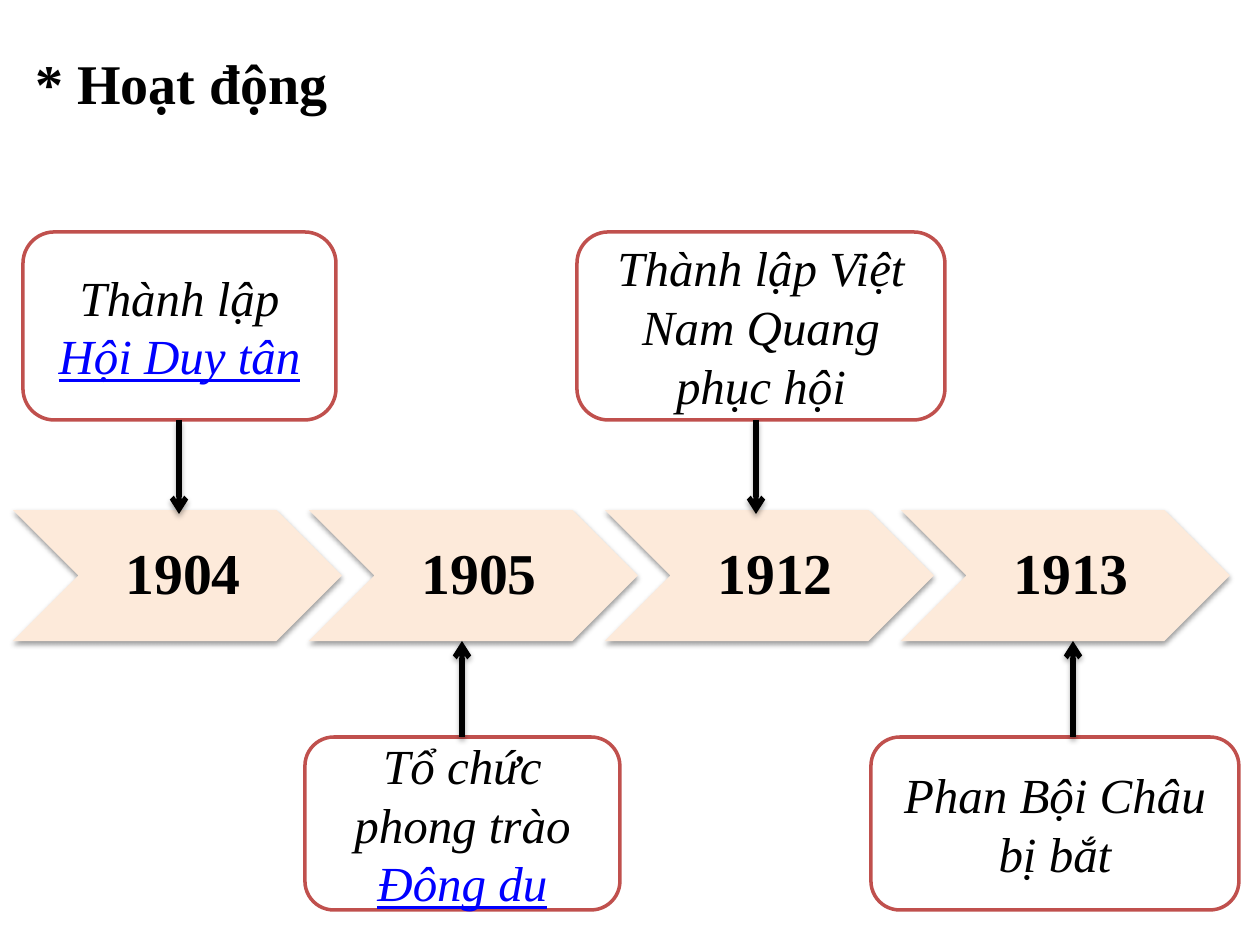
from dataclasses import dataclass

from lxml import etree
from pptx import Presentation
from pptx import util as u
from pptx.dml.color import RGBColor
from pptx.enum import shapes, text
from pptx.oxml import ns

PX = u.Inches(1) / 126  # one px in EMU


@dataclass(frozen=True)
class Theme:
    font: str = "Times New Roman"
    ink: str = "000000"
    link: str = "0000FF"
    paper: str = "FFFFFF"
    border: str = "C0504D"
    band: str = "FDEADA"
    title_size: int = 32
    year_size: int = 33
    event_size: int = 28


@dataclass(frozen=True)
class Event:
    year: str
    wording: str
    linked: str
    left: int
    width: int
    above: bool
    arrow_x: int


THEME = Theme()
EVENTS = (
    Event("1904", "Thành lập ", "Hội Duy tân", 23, 313, True, 179),
    Event("1905", "Tổ chức phong trào ", "Đông du", 305, 315, False, 462),
    Event("1912", "Thành lập Việt Nam Quang phục hội", "", 577, 368, True, 756),
    Event("1913", "Phan Bội Châu bị bắt", "", 871, 368, False, 1073),
)

# Timeline band and the two rows of event boxes
BAND_LEFT, BAND_TOP, BAND_HEIGHT = 13, 510, 131
CHEVRON_WIDTH, CHEVRON_STEP = 329, 296
UPPER_TOP, UPPER_HEIGHT = 232, 188
LOWER_TOP, LOWER_HEIGHT = 737, 173
ARROW_OVERLAP = 4


def px(*lengths: int) -> list[int]:
    return [round(length * PX) for length in lengths]


def color(value: str) -> RGBColor:
    return RGBColor.from_string(value)


def set_font(font, size: int, bold: bool = False, italic: bool = False) -> None:
    font.name = THEME.font
    font.size = u.Pt(size)
    font.bold = bold
    font.italic = italic
    font.color.rgb = color(THEME.ink)


def add_shadow(item, opacity: int, distance: float) -> None:
    properties = item._element.spPr
    for old in properties.findall(ns.qn("a:effectLst")):
        properties.remove(old)
    effects = etree.SubElement(properties, ns.qn("a:effectLst"))
    shadow = etree.SubElement(
        effects, ns.qn("a:outerShdw"), blurRad=str(u.Pt(3.1)),
        dist=str(u.Pt(distance)), dir="5400000", rotWithShape="0")
    tint = etree.SubElement(shadow, ns.qn("a:srgbClr"), val=THEME.ink)
    etree.SubElement(tint, ns.qn("a:alpha"), val=str(opacity * 1000))


def add_title(page, wording: str) -> None:
    box = page.shapes.add_textbox(*px(23, 42, 777, 81))
    box.text_frame.word_wrap = True
    para = box.text_frame.paragraphs[0]
    para.text = wording
    para.alignment = text.PP_ALIGN.JUSTIFY
    set_font(para.font, THEME.title_size, bold=True)


def add_year(page, index: int, year: str) -> None:
    chevron = page.shapes.add_shape(
        shapes.MSO_SHAPE.CHEVRON,
        *px(BAND_LEFT + index * CHEVRON_STEP, BAND_TOP, CHEVRON_WIDTH, BAND_HEIGHT))
    chevron.fill.solid()
    chevron.fill.fore_color.rgb = color(THEME.band)
    chevron.line.fill.background()
    add_shadow(chevron, 38, 1.6)

    frame = chevron.text_frame
    frame.word_wrap = True
    frame.vertical_anchor = text.MSO_ANCHOR.MIDDLE
    frame.margin_left = u.Inches(0.14)
    frame.margin_right = u.Inches(0.05)
    para = frame.paragraphs[0]
    para.text = year
    para.alignment = text.PP_ALIGN.CENTER
    para.line_spacing = 0.9
    set_font(para.font, THEME.year_size, bold=True)


def add_event(page, event: Event) -> None:
    top, height = (UPPER_TOP, UPPER_HEIGHT) if event.above else (LOWER_TOP, LOWER_HEIGHT)
    box = page.shapes.add_shape(
        shapes.MSO_SHAPE.ROUNDED_RECTANGLE, *px(event.left, top, event.width, height))
    box.shadow.inherit = False
    box.fill.solid()
    box.fill.fore_color.rgb = color(THEME.paper)
    box.line.color.rgb = color(THEME.border)
    box.line.width = u.Pt(2)

    box.text_frame.word_wrap = True
    box.text_frame.vertical_anchor = text.MSO_ANCHOR.MIDDLE
    para = box.text_frame.paragraphs[0]
    para.alignment = text.PP_ALIGN.CENTER
    set_font(para.font, THEME.event_size, italic=True)
    para.add_run().text = event.wording
    if event.linked:
        span = para.add_run()
        span.text = event.linked
        span.font.underline = True
        span.font.color.rgb = color(THEME.link)


def add_arrow(page, event: Event) -> None:
    if event.above:
        start, end = UPPER_TOP + UPPER_HEIGHT, BAND_TOP + ARROW_OVERLAP
    else:
        start, end = LOWER_TOP, BAND_TOP + BAND_HEIGHT
    arrow = page.shapes.add_connector(
        shapes.MSO_CONNECTOR.STRAIGHT, *px(event.arrow_x, start, event.arrow_x, end))
    arrow.line.color.rgb = color(THEME.ink)
    arrow.line.width = u.Pt(3)
    etree.SubElement(arrow.line._get_or_add_ln(), ns.qn("a:tailEnd"), type="arrow")
    add_shadow(arrow, 35, 1.8)


def main() -> None:
    deck = Presentation()
    deck.slide_width, deck.slide_height = px(1260, 945)
    page = deck.slides.add_slide(deck.slide_layouts[6])

    # Timeline
    for index, event in enumerate(EVENTS):
        add_year(page, index, event.year)

    # Events and their arrows to the timeline
    for event in EVENTS:
        add_event(page, event)
        add_arrow(page, event)

    add_title(page, "* Hoạt động")
    deck.save("out.pptx")


if __name__ == "__main__":
    main()
